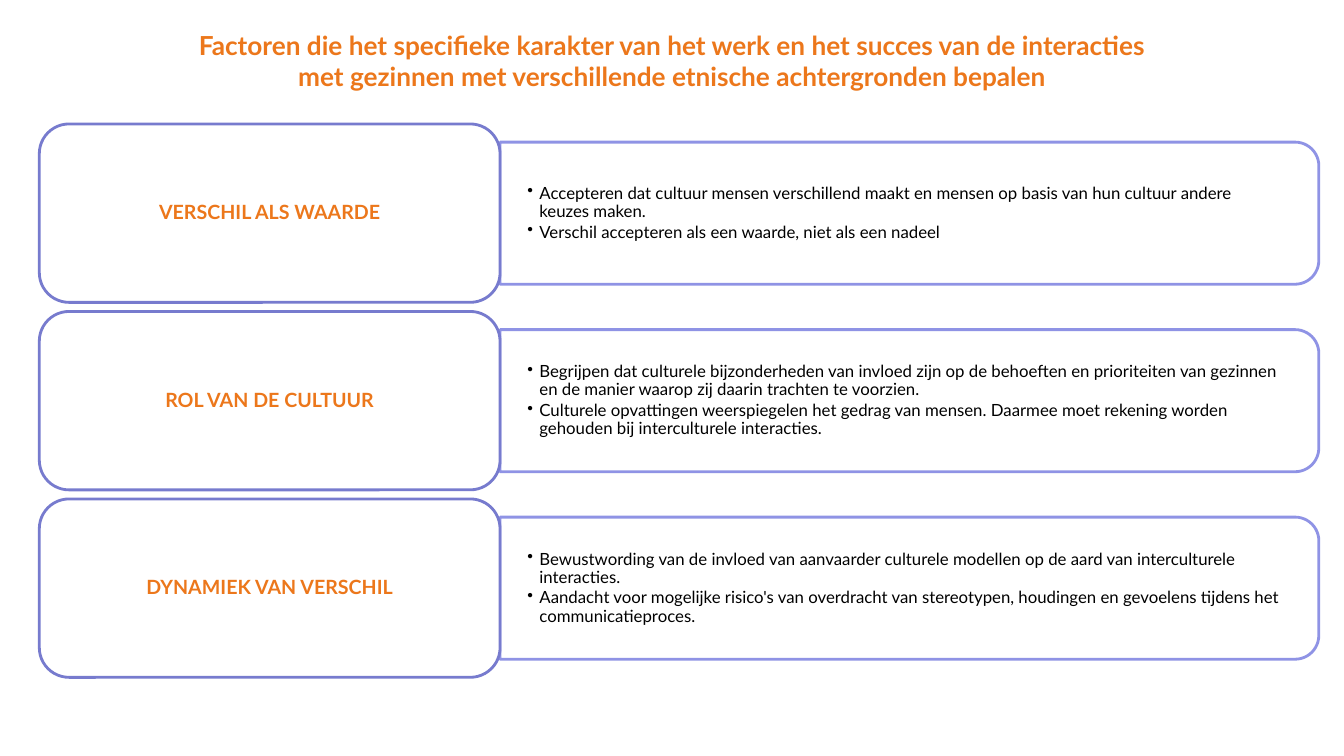
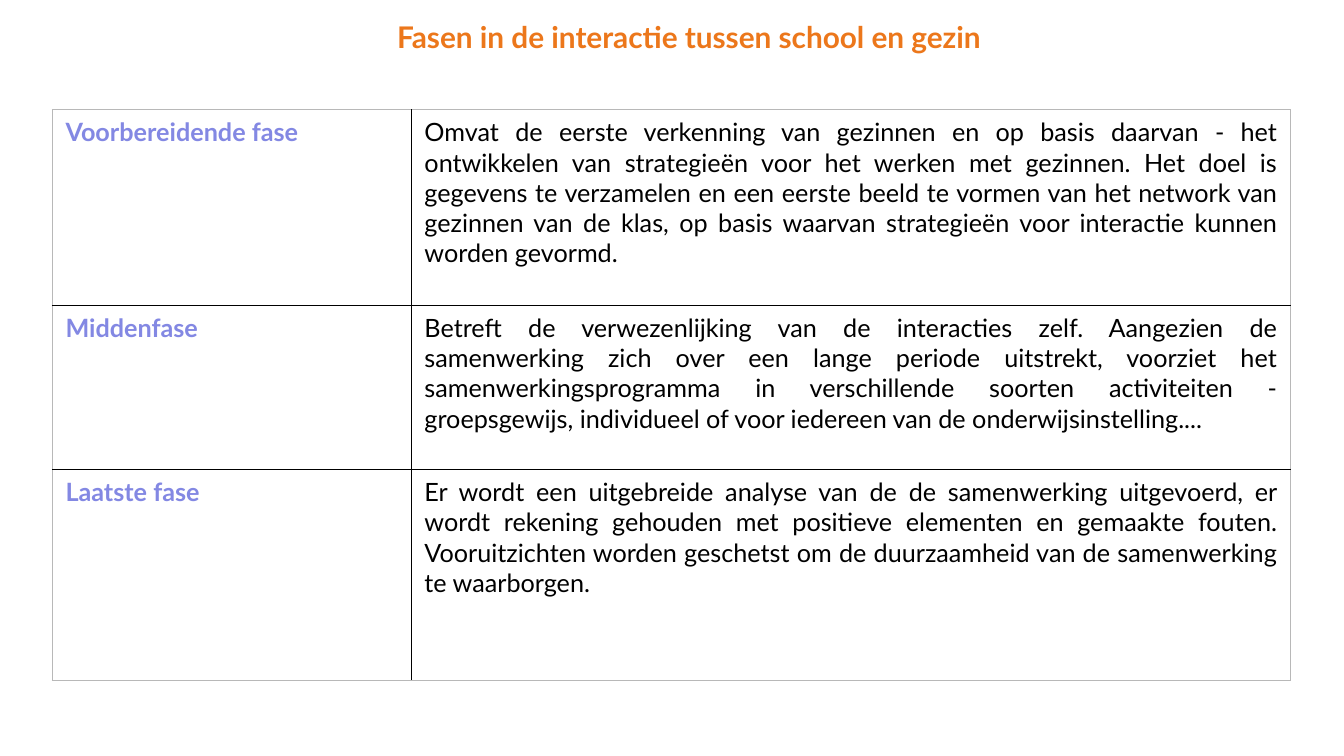
"""Build two slides on interaction between schools and families."""
from dataclasses import dataclass

from lxml import etree
from pptx import Presentation
from pptx.dml.color import RGBColor
from pptx.enum.shapes import MSO_SHAPE
from pptx.enum.text import MSO_ANCHOR, MSO_AUTO_SIZE, PP_ALIGN
from pptx.oxml.ns import qn
from pptx.util import Inches, Pt

ROUND_RECT = MSO_SHAPE.ROUNDED_RECTANGLE
ROUND_TOP = MSO_SHAPE.ROUND_2_SAME_RECTANGLE
CENTER, JUSTIFY, LEFT = PP_ALIGN.CENTER, PP_ALIGN.JUSTIFY, PP_ALIGN.LEFT
MIDDLE, NO_FIT = MSO_ANCHOR.MIDDLE, MSO_AUTO_SIZE.NONE

FONT = "Lato"
COLORS = {
    "title": "EC771B", "label_line": "777BCE", "accent": "8388E3",
    "text": "000000", "paper": "FFFFFF", "grid": "000000", "frame": "B8B8B8",
}
SLIDE_W, SLIDE_H = 13.33, 7.5
TITLE_ONLY = 5

FACTOR_TOP, FACTOR_PITCH = 1.23, 1.86
LABEL_X, LABEL_W, LABEL_H = 0.39, 4.57, 1.77
PANEL_X, PANEL_W, PANEL_H = LABEL_X + LABEL_W, 8.12, 1.41

TABLE_X, TABLE_Y = 0.52, 1.09
COL_WIDTHS = (3.56, 8.72)
CELL_PAD_X, CELL_PAD_Y = 0.13, 0.07


@dataclass
class Factor:
    """A labelled box and the points in its panel."""
    label: str
    points: tuple[str, ...]


@dataclass
class Phase:
    """A table row."""
    name: str
    text: str
    height: float


FACTORS = (
    Factor("VERSCHIL ALS WAARDE", (
        "Accepteren dat cultuur mensen verschillend maakt en mensen op basis van hun cultuur andere keuzes maken.",
        "Verschil accepteren als een waarde, niet als een nadeel",
    )),
    Factor("ROL VAN DE CULTUUR", (
        "Begrijpen dat culturele bijzonderheden van invloed zijn op de behoeften en prioriteiten van gezinnen "
        "en de manier waarop zij daarin trachten te voorzien.",
        "Culturele opvattingen weerspiegelen het gedrag van mensen. Daarmee moet rekening worden gehouden "
        "bij interculturele interacties.",
    )),
    Factor("DYNAMIEK VAN VERSCHIL", (
        "Bewustwording van de invloed van aanvaarder culturele modellen op de aard van interculturele interacties.",
        "Aandacht voor mogelijke risico's van overdracht van stereotypen, houdingen en gevoelens tijdens het "
        "communicatieproces.",
    )),
)

PHASES = (
    Phase("Voorbereidende fase",
          "Omvat de eerste verkenning van gezinnen en op basis daarvan - het ontwikkelen van strategieën voor het "
          "werken met gezinnen. Het doel is gegevens te verzamelen en een eerste beeld te vormen van het network "
          "van gezinnen van de klas, op basis waarvan strategieën voor interactie kunnen worden gevormd.", 1.94),
    Phase("Middenfase",
          "Betreft de verwezenlijking van de interacties zelf. Aangezien de samenwerking zich over een lange "
          "periode uitstrekt, voorziet het samenwerkingsprogramma in verschillende soorten activiteiten - "
          "groepsgewijs, individueel of voor iedereen van de onderwijsinstelling....", 1.63),
    Phase("Laatste fase",
          "Er wordt een uitgebreide analyse van de de samenwerking uitgevoerd, er wordt rekening gehouden met "
          "positieve elementen en gemaakte fouten. Vooruitzichten worden geschetst om de duurzaamheid van de "
          "samenwerking te waarborgen.", 2.09),
)


def rgb(name: str) -> RGBColor:
    """Look up a named colour."""
    return RGBColor.from_string(COLORS[name])


def format_text(tf, size: float, color: str, bold: bool, align, spacing: float = 1.0) -> None:
    """Format every paragraph and run of a text frame."""
    for p in tf.paragraphs:
        p.alignment = align
        p.line_spacing = spacing
        for r in p.runs:
            r.font.name, r.font.size, r.font.bold = FONT, Pt(size), bold
            r.font.color.rgb = rgb(color)


def set_indent(p, margin: float, first: float):
    """Set the left margin and first-line indent, and return the properties."""
    pPr = p._p.get_or_add_pPr()
    pPr.set("marL", str(Inches(margin)))
    pPr.set("indent", str(Inches(first)))
    return pPr


def add_titled_slide(prs, title: str, top: float, height: float, size: float, margin: float):
    """Add a slide with a full-width centred title."""
    s = prs.slides.add_slide(prs.slide_layouts[TITLE_ONLY])
    sp = s.shapes.title
    sp.left, sp.top, sp.width, sp.height = 0, Inches(top), prs.slide_width, Inches(height)
    tf = sp.text_frame
    tf.text = title
    tf.auto_size, tf.vertical_anchor, tf.word_wrap = NO_FIT, MIDDLE, True
    format_text(tf, size, "title", True, CENTER)
    for p in tf.paragraphs:
        set_indent(p, margin, -0.33)
    return s


def add_box(s, preset, x: float, y: float, w: float, h: float, line: str):
    """Add a white outlined shape."""
    sp = s.shapes.add_shape(preset, Inches(x), Inches(y), Inches(w), Inches(h))
    sp.shadow.inherit = False
    sp.fill.solid()
    sp.fill.fore_color.rgb = rgb("paper")
    sp.line.color.rgb = rgb(line)
    sp.line.width = Pt(2)
    return sp


def add_panel(s, center_y: float, points: tuple[str, ...]) -> None:
    """Add a panel rounded on its right side, with bulleted text."""
    center_x = PANEL_X + PANEL_W / 2
    sp = add_box(s, ROUND_TOP, center_x - PANEL_H / 2, center_y - PANEL_W / 2, PANEL_H, PANEL_W, "accent")
    sp.rotation = 90
    for color in sp._element.spPr.iter(qn("a:srgbClr")):
        etree.SubElement(color, qn("a:alpha")).set("val", "90000")

    text_h = 1.28
    box = s.shapes.add_textbox(Inches(PANEL_X), Inches(center_y - text_h / 2), Inches(8.05), Inches(text_h))
    tf = box.text_frame
    tf.word_wrap, tf.vertical_anchor = True, MIDDLE
    tf.margin_left = tf.margin_right = Inches(0.27)
    tf.margin_top = tf.margin_bottom = Inches(0.14)
    tf.text = "\n".join(points)
    for p in tf.paragraphs:
        pPr = set_indent(p, 0.12, -0.12)
        etree.SubElement(pPr, qn("a:buChar")).set("char", "•")
        p.space_after = Pt(1.8)
    format_text(tf, 12, "text", False, LEFT, 0.9)


def add_factor(s, row: int, factor: Factor) -> None:
    """Draw one factor with its panel behind the label."""
    top = FACTOR_TOP + row * FACTOR_PITCH
    add_panel(s, top + LABEL_H / 2, factor.points)
    sp = add_box(s, ROUND_RECT, LABEL_X, top, LABEL_W, LABEL_H, "label_line")
    tf = sp.text_frame
    tf.word_wrap, tf.vertical_anchor = True, MIDDLE
    tf.text = factor.label
    format_text(tf, 14, "title", True, CENTER, 0.9)


def set_borders(cell, sides: dict[str, str]) -> None:
    """Draw one-point cell borders, given a colour for each side."""
    tcPr = cell._tc.get_or_add_tcPr()
    for side, color in sides.items():
        ln = etree.SubElement(tcPr, qn(f"a:ln{side}"), w=str(Pt(1)))
        fill = etree.SubElement(ln, qn("a:solidFill"))
        etree.SubElement(fill, qn("a:srgbClr")).set("val", COLORS[color])


def add_phase_table(s, phases: tuple[Phase, ...]) -> None:
    """Draw the table of phases."""
    n_rows, n_cols = len(phases), len(COL_WIDTHS)
    frame = s.shapes.add_table(
        n_rows, n_cols, Inches(TABLE_X), Inches(TABLE_Y),
        Inches(sum(COL_WIDTHS)), Inches(sum(phase.height for phase in phases)))
    table = frame.table
    table.first_row = table.horz_banding = False
    for col, width in enumerate(COL_WIDTHS):
        table.columns[col].width = Inches(width)
    for row, phase in enumerate(phases):
        table.rows[row].height = Inches(phase.height)
        styles = ((phase.name, "accent", True, LEFT), (phase.text, "text", False, JUSTIFY))
        for col, (text, color, bold, align) in enumerate(styles):
            cell = table.cell(row, col)
            set_borders(cell, {
                "L": "frame" if col == 0 else "grid",
                "R": "frame" if col == n_cols - 1 else "grid",
                "T": "frame" if row == 0 else "grid",
                "B": "frame" if row == n_rows - 1 else "grid",
            })
            cell.fill.solid()
            cell.fill.fore_color.rgb = rgb("paper")
            cell.margin_left = cell.margin_right = Inches(CELL_PAD_X)
            cell.margin_top = cell.margin_bottom = Inches(CELL_PAD_Y)
            cell.text_frame.text = text
            format_text(cell.text_frame, 18, color, bold, align)


def main() -> None:
    """Build and save the presentation."""
    prs = Presentation()
    prs.slide_width, prs.slide_height = Inches(SLIDE_W), Inches(SLIDE_H)

    s = add_titled_slide(
        prs, "Factoren die het specifieke karakter van het werk en het succes van de interacties\n"
        "met gezinnen met verschillende etnische achtergronden bepalen", 0.18, 0.84, 18.7, 0.33)
    for p in s.shapes.title.text_frame.paragraphs:
        set_indent(p, 0, 0)
    for row, factor in enumerate(FACTORS):
        add_factor(s, row, factor)

    s = add_titled_slide(prs, "Fasen in de interactie tussen school en gezin", 0.1, 0.53, 21.3, 0.67)
    add_phase_table(s, PHASES)
    prs.save("out.pptx")


if __name__ == "__main__":
    main()
